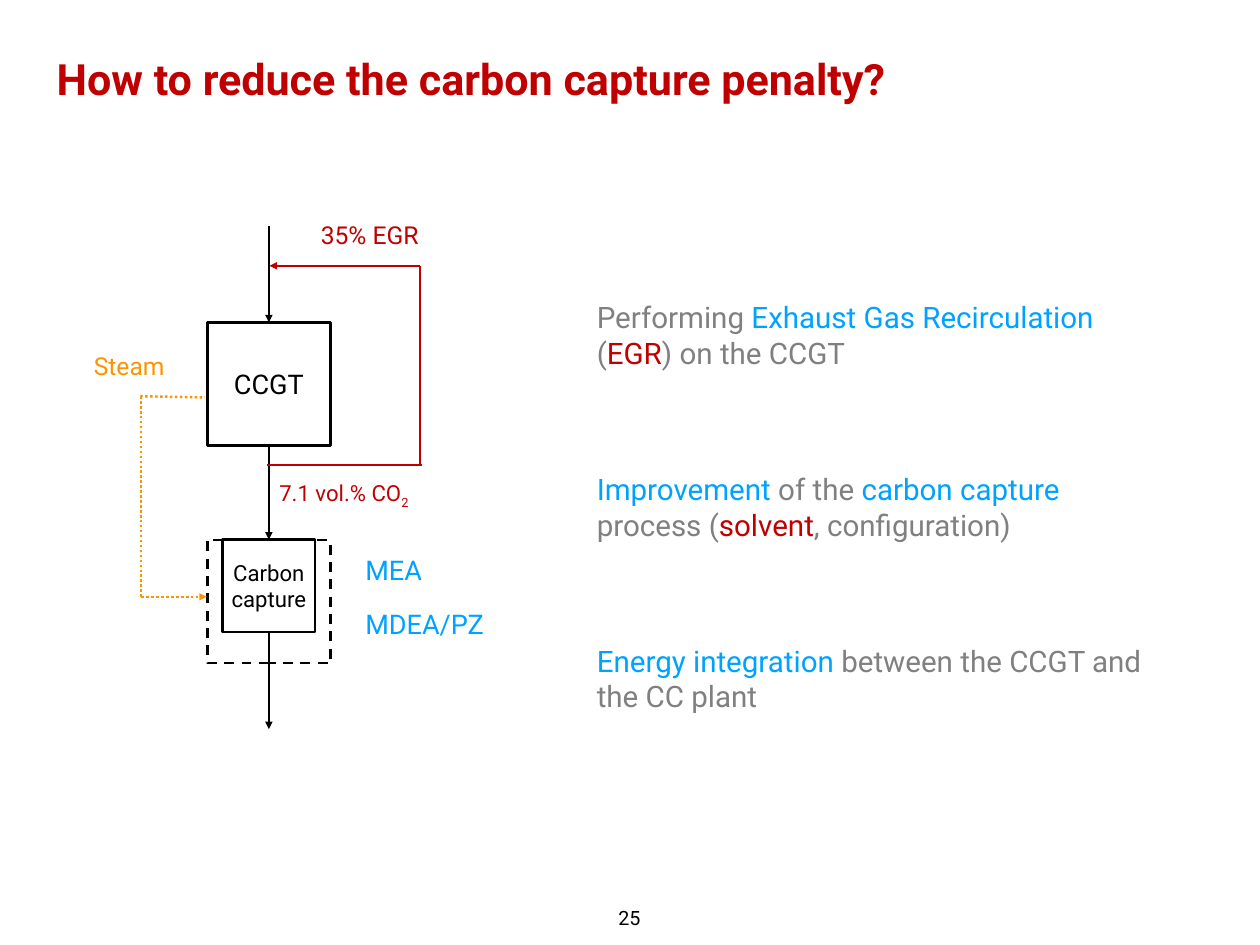
from dataclasses import dataclass
from typing import Optional

from lxml import etree
from pptx import Presentation
from pptx.dml.color import RGBColor
from pptx.enum.dml import MSO_LINE
from pptx.enum.shapes import MSO_CONNECTOR, MSO_SHAPE
from pptx.enum.text import MSO_ANCHOR, PP_ALIGN
from pptx.oxml.ns import qn
from pptx.util import Pt

LEFT, MID = PP_ALIGN.LEFT, PP_ALIGN.CENTER
TOP, CENTRE = MSO_ANCHOR.TOP, MSO_ANCHOR.MIDDLE
DASH, DOTS = MSO_LINE.DASH, MSO_LINE.ROUND_DOT
STRAIGHT, RECT = MSO_CONNECTOR.STRAIGHT, MSO_SHAPE.RECTANGLE
NORTH, SOUTH = 0, 2


@dataclass(frozen=True)
class Theme:
    font: str = "Roboto"
    black: str = "000000"
    red: str = "C00000"
    blue: str = "00A2FF"
    grey: str = "808080"
    gold: str = "FE9301"
    head: int = 35
    body: int = 24
    large: int = 22
    label: int = 20
    small: int = 18
    page: int = 16
    inset: float = 4
    stroke: float = 2


THEME = Theme()


@dataclass(frozen=True)
class Word:
    text: str
    tint: str
    sub: bool = False


@dataclass(frozen=True)
class Note:
    left: float
    top: float
    width: float
    height: float
    size: int
    words: tuple[Word, ...]
    align: PP_ALIGN = MID
    anchor: MSO_ANCHOR = CENTRE
    wrap: bool = False
    bold: bool = False


@dataclass(frozen=True)
class Box:
    name: str
    left: float
    top: float
    side: float
    text: str = ""
    size: int = THEME.large
    dash: Optional[MSO_LINE] = None


@dataclass(frozen=True)
class Link:
    start: tuple[float, float]
    end: tuple[float, float]
    tint: str = THEME.black
    arrow: bool = False
    dash: Optional[MSO_LINE] = None
    source: str = ""
    target: str = ""


def aim(x: float, top: float, gap: float, *rows: tuple[Word, ...]) -> list[Note]:
    return [Note(x, top + gap * i, 460, 66, THEME.body, row, LEFT, wrap=True)
            for i, row in enumerate(rows)]


NOTES = [
    Note(498, 732, 27, 25, THEME.page, (Word("25", THEME.black),), anchor=TOP),
    Note(42, 39, 901, 107, THEME.head,
         (Word("How to reduce the carbon capture penalty?", THEME.red),),
         LEFT, TOP, True, True),
    Note(252, 174, 97, 33, THEME.label, (Word("35% EGR", THEME.red),)),
    Note(222.5, 387, 114, 30, THEME.small,
         (Word("7.1 vol.% CO", THEME.red), Word("2", THEME.red, True))),
    Note(52, 281, 106, 32, THEME.label, (Word("Steam", THEME.gold),)),
    Note(293, 446, 55, 34, THEME.large, (Word("MEA", THEME.blue),), LEFT),
    Note(293, 490, 105, 34, THEME.large, (Word("MDEA/PZ", THEME.blue),), LEFT),
    *aim(
        481, 239, 139.7,
        (Word("Performing ", THEME.grey),
         Word("Exhaust Gas Recirculation ", THEME.blue),
         Word("(", THEME.grey), Word("EGR", THEME.red),
         Word(") on the CCGT", THEME.grey)),
        (Word("Improvement", THEME.blue), Word(" of the ", THEME.grey),
         Word("carbon capture ", THEME.blue), Word("process (", THEME.grey),
         Word("solvent", THEME.red), Word(", configuration)", THEME.grey)),
        (Word("Energy integration ", THEME.blue),
         Word("between the CCGT and the CC plant", THEME.grey)),
    ),
]

BOXES = [
    Box("plant", 168.5, 262, 100, "CCGT"),
    Box("frame", 168.5, 439, 100, dash=DASH),
    Box("capture", 181, 438.5, 75, "Carbon capture", THEME.small),
]

LINKS = [
    Link((218.5, 184), (218.5, 262), arrow=True, target="plant"),
    Link((218.5, 362), (218.5, 438.5), arrow=True, source="plant", target="capture"),
    Link((218.5, 513.5), (218.5, 592.5), arrow=True, source="capture"),
    Link((217, 378), (343, 378), THEME.red),
    Link((341.5, 378), (341.5, 216), THEME.red),
    Link((341.5, 216), (219, 216), THEME.red, True),
    Link((114.5, 485), (114.5, 322), THEME.gold, dash=DOTS),
    Link((114, 322), (166.5, 323), THEME.gold, dash=DOTS),
    Link((115, 485), (168, 485), THEME.gold, True, DOTS),
]


def write(shape, words: tuple[Word, ...], size: int, align: PP_ALIGN,
          anchor: MSO_ANCHOR, wrap: bool, bold: bool = False) -> None:
    frame = shape.text_frame
    frame.word_wrap = wrap
    frame.vertical_anchor = anchor
    frame.margin_left = frame.margin_right = Pt(THEME.inset)
    frame.margin_top = frame.margin_bottom = Pt(THEME.inset)
    para = frame.paragraphs[0]
    para.alignment = align
    para.font.name, para.font.size, para.font.bold = THEME.font, Pt(size), bold
    for word in words:
        run = para.add_run()
        run.text = word.text
        run.font.color.rgb = RGBColor.from_string(word.tint)
        if word.sub:
            run.font._element.set("baseline", "-25000")


def stroke(line, tint: str, dash: Optional[MSO_LINE]) -> None:
    line.color.rgb = RGBColor.from_string(tint)
    line.width = Pt(THEME.stroke)
    if dash is not None:
        line.dash_style = dash


def add_note(slide, note: Note) -> None:
    shape = slide.shapes.add_textbox(
        Pt(note.left), Pt(note.top), Pt(note.width), Pt(note.height))
    write(shape, note.words, note.size, note.align, note.anchor, note.wrap, note.bold)


def add_box(slide, box: Box):
    shape = slide.shapes.add_shape(
        RECT, Pt(box.left), Pt(box.top), Pt(box.side), Pt(box.side))
    shape.shadow.inherit = False
    shape.fill.background()
    stroke(shape.line, THEME.black, box.dash)
    if box.text:
        write(shape, (Word(box.text, THEME.black),), box.size, MID, CENTRE, True)
    return shape


def add_link(slide, link: Link, shapes: dict) -> None:
    wire = slide.shapes.add_connector(
        STRAIGHT, *(Pt(n) for n in link.start + link.end))
    if link.source:
        wire.begin_connect(shapes[link.source], SOUTH)
    if link.target:
        wire.end_connect(shapes[link.target], NORTH)
    stroke(wire.line, link.tint, link.dash)
    if link.arrow:
        etree.SubElement(wire.line._get_or_add_ln(), qn("a:tailEnd"), type="triangle")
    etree.SubElement(wire._element.spPr, qn("a:effectLst"))


def main() -> None:
    deck = Presentation()
    deck.slide_width, deck.slide_height = Pt(1024), Pt(768)
    slide = deck.slides.add_slide(deck.slide_layouts[6])
    shapes = {box.name: add_box(slide, box) for box in BOXES}
    for link in LINKS:
        add_link(slide, link, shapes)
    for note in NOTES:
        add_note(slide, note)
    deck.save("out.pptx")


if __name__ == "__main__":
    main()
